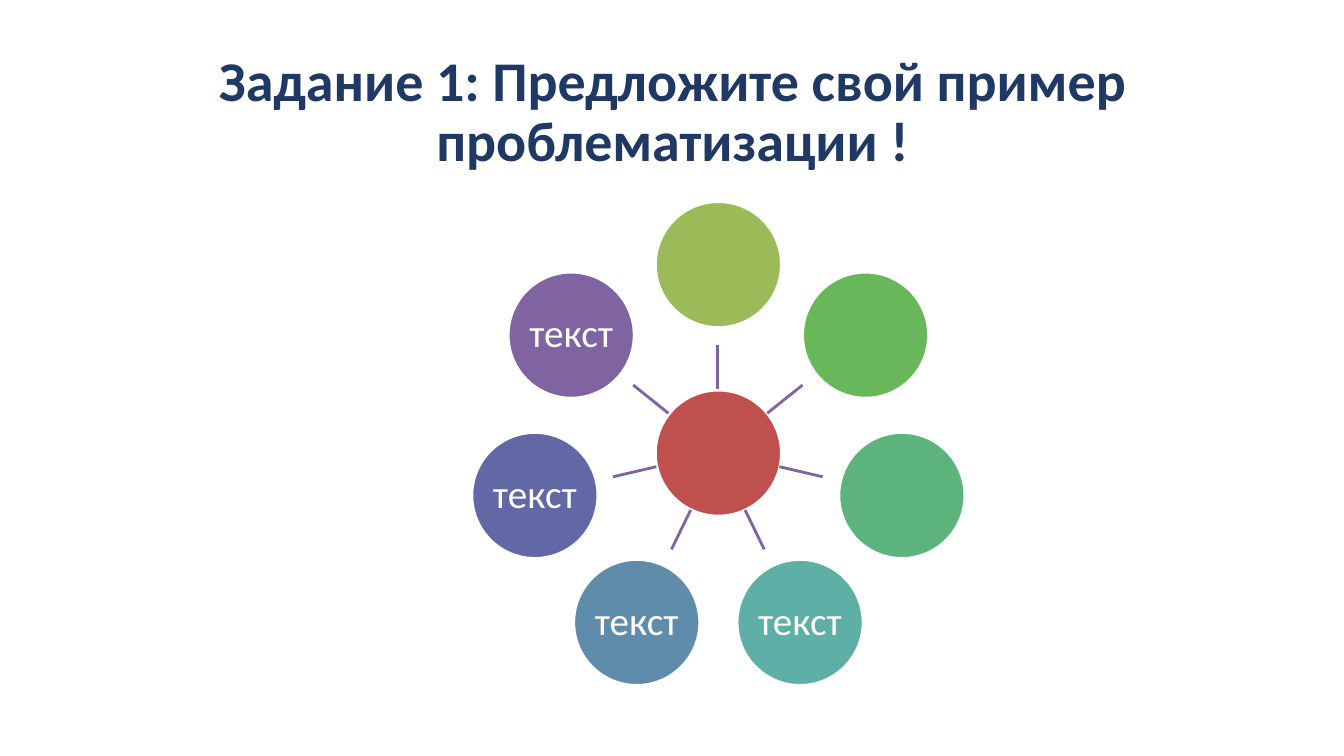
from dataclasses import dataclass
from math import cos, pi, sin
from typing import Any

from lxml.etree import SubElement
from pptx import Presentation
from pptx.dml.color import RGBColor
from pptx.enum.shapes import MSO_CONNECTOR, MSO_SHAPE
from pptx.enum.text import MSO_ANCHOR, MSO_AUTO_SIZE, PP_ALIGN
from pptx.oxml.ns import qn
from pptx.slide import Slide
from pptx.text.text import TextFrame
from pptx.util import Emu, Pt

EMU_PER_PX = 9144


@dataclass(frozen=True)
class Theme:
    font: str = "Calibri"
    title_size: int = 40
    label_size: int = 28
    stroke: int = 2
    title: str = "203864"
    white: str = "FFFFFF"
    hub: str = "C0504D"
    spoke: str = "8064A2"


@dataclass(frozen=True)
class Point:
    x: int
    y: int


@dataclass(frozen=True)
class Petal:
    fill: str
    label: str = ""


THEME = Theme()
HUB = Point(712, 449)
CIRCLE_SIZE = 125
RING_RADIUS = 187
SPOKE_START = 63
SPOKE_END = 107
PETALS = (
    Petal("9BBB59"),
    Petal("69B75B"),
    Petal("5CB37C"),
    Petal("5EAFA6", "текст"),
    Petal("608CAB", "текст"),
    Petal("6267A6", "текст"),
    Petal("8064A2", "текст"),
)


def px(length: int) -> Emu:
    return Emu(length * EMU_PER_PX)


def rgb(colour: str) -> RGBColor:
    return RGBColor.from_string(colour)


def apply_format(target: Any, values: dict[str, Any]) -> None:
    for attribute, value in values.items():
        setattr(target, attribute, value)


def on_ring(radius: int, angle: float) -> Point:
    return Point(HUB.x + round(radius * sin(angle)), HUB.y - round(radius * cos(angle)))


def write_text(frame: TextFrame, wording: str, size: int, colour: str, bold: bool) -> None:
    frame.text = wording
    apply_format(frame, {
        "word_wrap": True,
        "auto_size": MSO_AUTO_SIZE.NONE,
        "vertical_anchor": MSO_ANCHOR.MIDDLE,
    })
    paragraph = frame.paragraphs[0]
    apply_format(paragraph, {"alignment": PP_ALIGN.CENTER, "line_spacing": 0.9})
    font = paragraph.runs[0].font
    apply_format(font, {"name": THEME.font, "size": Pt(size), "bold": bold})
    font.color.rgb = rgb(colour)


def add_title(slide: Slide, wording: str) -> None:
    title = slide.shapes.title
    apply_format(title, {"left": px(92), "top": px(40), "width": px(1150), "height": px(145)})
    write_text(title.text_frame, wording, THEME.title_size, THEME.title, True)


def add_circle(slide: Slide, centre: Point, fill: str, label: str = "") -> None:
    circle = slide.shapes.add_shape(
        MSO_SHAPE.OVAL,
        px(centre.x - CIRCLE_SIZE // 2),
        px(centre.y - CIRCLE_SIZE // 2),
        px(CIRCLE_SIZE),
        px(CIRCLE_SIZE),
    )
    circle.shadow.inherit = False
    circle.fill.solid()
    circle.fill.fore_color.rgb = rgb(fill)
    circle.line.color.rgb = rgb(THEME.white)
    circle.line.width = Pt(THEME.stroke)
    if label:
        margins = ("margin_left", "margin_top", "margin_right", "margin_bottom")
        apply_format(circle.text_frame, dict.fromkeys(margins, px(2)))
        write_text(circle.text_frame, label, THEME.label_size, THEME.white, False)


def add_spoke(slide: Slide, angle: float) -> None:
    start, end = on_ring(SPOKE_START, angle), on_ring(SPOKE_END, angle)
    spoke = slide.shapes.add_connector(
        MSO_CONNECTOR.STRAIGHT, px(start.x), px(start.y), px(end.x), px(end.y)
    )
    spoke.line.color.rgb = rgb(THEME.spoke)
    spoke.line.width = Pt(THEME.stroke)
    SubElement(spoke._element.spPr, qn("a:effectLst"))


def main() -> None:
    presentation = Presentation()
    apply_format(presentation, {"slide_width": px(1333), "slide_height": px(750)})
    slide = presentation.slides.add_slide(presentation.slide_layouts[5])
    add_title(slide, "Задание 1: Предложите свой пример проблематизации !")
    add_circle(slide, HUB, THEME.hub)
    for position, petal in enumerate(PETALS):
        angle = 2 * pi * position / len(PETALS)
        add_spoke(slide, angle)
        add_circle(slide, on_ring(RING_RADIUS, angle), petal.fill, petal.label)
    presentation.save("out.pptx")


if __name__ == "__main__":
    main()
